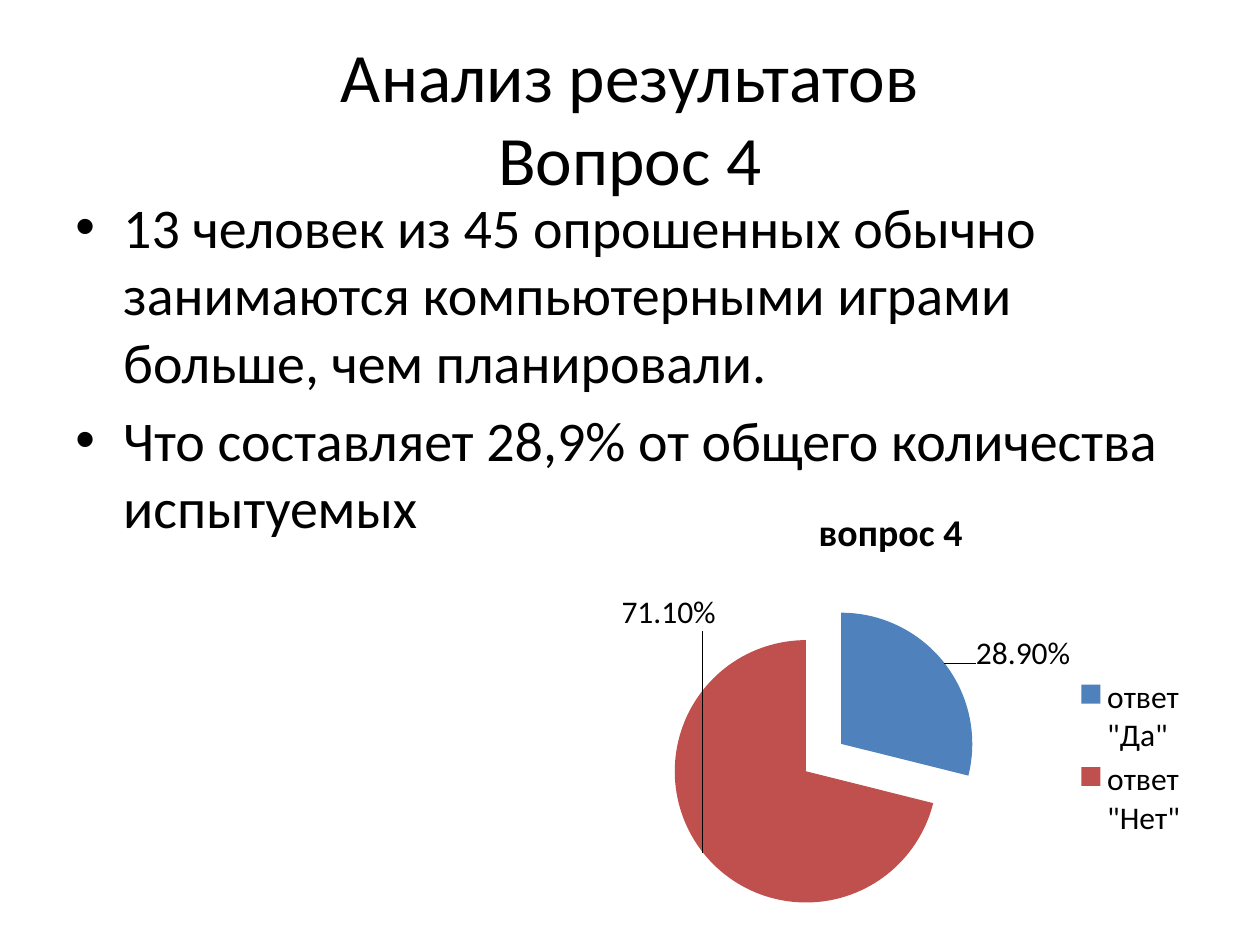
import pptx
import pptx.util
import pptx.dml.color
import pptx.enum.text
import pptx.enum.chart
import pptx.chart.data
import pptx.oxml
import pptx.oxml.ns

theme = {
    "font": "Calibri",
    "bullet_font": "Arial",
    "ink": pptx.dml.color.RGBColor(0x00, 0x00, 0x00),
    "answers": ["4F81BD", "C0504D"],
    "heading": 39.6,
    "body": 32,
    "chart_title": 21.6,
    "chart": 18,
}


def set_font(font, size, bold=False):
    font.name = theme["font"]
    font.size = pptx.util.Pt(theme[size])
    font.bold = bold
    font.color.rgb = theme["ink"]


def chart_layout(modes="", **shares):
    values = "".join(f'<c:{side} val="{share}"/>' for side, share in shares.items())
    return pptx.oxml.parse_xml(
        f'<c:layout {pptx.oxml.ns.nsdecls("c")}><c:manualLayout>{modes}{values}'
        f'</c:manualLayout></c:layout>'
    )


deck = pptx.Presentation()
deck.slide_width = pptx.util.Inches(10)
deck.slide_height = pptx.util.Inches(7.5)
width, height = deck.slide_width, deck.slide_height
slide = deck.slides.add_slide(deck.slide_layouts[6])

margin = int(width * 0.05)
content_width = width - 2 * margin

heading = slide.shapes.add_textbox(
    margin, int(height * 0.04), content_width, int(height / 6)
).text_frame
heading.word_wrap = True
heading.vertical_anchor = pptx.enum.text.MSO_ANCHOR.MIDDLE
heading.text = "Анализ результатов\vВопрос 4"
heading.paragraphs[0].alignment = pptx.enum.text.PP_ALIGN.CENTER
set_font(heading.paragraphs[0].font, "heading")

findings = slide.shapes.add_textbox(
    margin, pptx.util.Inches(1.48), content_width, pptx.util.Inches(5.22)
).text_frame
findings.word_wrap = True
findings.text = (
    "13 человек из 45 опрошенных обычно занимаются компьютерными играми "
    "больше, чем планировали.\n"
    "Что составляет 28,9% от общего количества испытуемых"
)
indent = pptx.util.Inches(0.38)
bullet_parts = [f'buFont typeface="{theme["bullet_font"]}"', 'buChar char="•"']
for finding in findings.paragraphs:
    set_font(finding.font, "body")
    finding.space_before = pptx.util.Pt(theme["body"] * 0.2)
    properties = finding._p.get_or_add_pPr()
    properties.set("marL", str(indent))
    properties.set("indent", str(-indent))
    for bullet_part in bullet_parts:
        bullet = pptx.oxml.parse_xml(
            f'<a:{bullet_part} {pptx.oxml.ns.nsdecls("a")}/>'
        )
        properties.insert_element_before(bullet, "a:tabLst", "a:defRPr", "a:extLst")

answers = pptx.chart.data.CategoryChartData(number_format="0.00%")
answers.categories = ['ответ "Да"', 'ответ "Нет"']
answers.add_series("вопрос 4", [0.289, 0.711])
pie = slide.shapes.add_chart(
    pptx.enum.chart.XL_CHART_TYPE.PIE,
    pptx.util.Inches(4.53), pptx.util.Inches(3.83),
    pptx.util.Inches(5.08), pptx.util.Inches(3.67), answers,
).chart
set_font(pie.font, "chart")

pie.has_title = True
pie.chart_title.text_frame.text = "вопрос 4"
set_font(pie.chart_title.text_frame.paragraphs[0].font, "chart_title", bold=True)

edge_modes = '<c:xMode val="edge"/><c:yMode val="edge"/>'
pie.has_legend = True
pie.legend.position = pptx.enum.chart.XL_LEGEND_POSITION.RIGHT
pie.legend.include_in_layout = False
set_font(pie.legend.font, "chart")
legend_xml = pie.legend._element
for automatic in legend_xml.findall(pptx.oxml.ns.qn("c:layout")):
    legend_xml.remove(automatic)
legend_xml.find(pptx.oxml.ns.qn("c:legendPos")).addnext(
    chart_layout(edge_modes, x=0.78, y=0.41, w=0.19, h=0.37)
)

plot_area = pie._chartSpace.chart.plotArea
for automatic in plot_area.findall(pptx.oxml.ns.qn("c:layout")):
    plot_area.remove(automatic)
plot_area.insert(0, chart_layout(
    '<c:layoutTarget val="inner"/>' + edge_modes, x=0.19, y=0.31, w=0.41, h=0.57
))

plot = pie.plots[0]
plot.vary_by_categories = True
series = plot.series[0]
labels = series.data_labels
labels.show_value = True
labels.show_percentage = False
labels.number_format = "0.00%"
labels.number_format_is_linked = False
labels.position = pptx.enum.chart.XL_LABEL_POSITION.OUTSIDE_END
set_font(labels.font, "chart")
leader_lines = labels._element.find(pptx.oxml.ns.qn("c:showLeaderLines"))
if leader_lines is None:
    leader_lines = pptx.oxml.parse_xml(
        f'<c:showLeaderLines {pptx.oxml.ns.nsdecls("c")} val="1"/>'
    )
    labels._element.append(leader_lines)
leader_lines.set("val", "1")

label_shifts = [(0.04, 0.03), (0.03, -0.57)]
for number, (color, (right, down)) in enumerate(zip(theme["answers"], label_shifts)):
    answer = series.points[number]
    answer.format.fill.solid()
    answer.format.fill.fore_color.rgb = pptx.dml.color.RGBColor.from_string(color)
    slice_xml = series._element.findall(pptx.oxml.ns.qn("c:dPt"))[number]
    explosion = pptx.oxml.parse_xml(
        f'<c:explosion {pptx.oxml.ns.nsdecls("c")} val="17"/>'
    )
    slice_xml.find(pptx.oxml.ns.qn("c:spPr")).addprevious(explosion)
    set_font(answer.data_label.font, "chart")
    answer.data_label.position = pptx.enum.chart.XL_LABEL_POSITION.OUTSIDE_END
    label_xml = labels._element.findall(pptx.oxml.ns.qn("c:dLbl"))[number]
    label_xml.insert(1, chart_layout(x=right, y=down))

for label_body in labels._element.iter(pptx.oxml.ns.qn("a:bodyPr")):
    label_body.set("wrap", "none")

deck.save("out.pptx")
